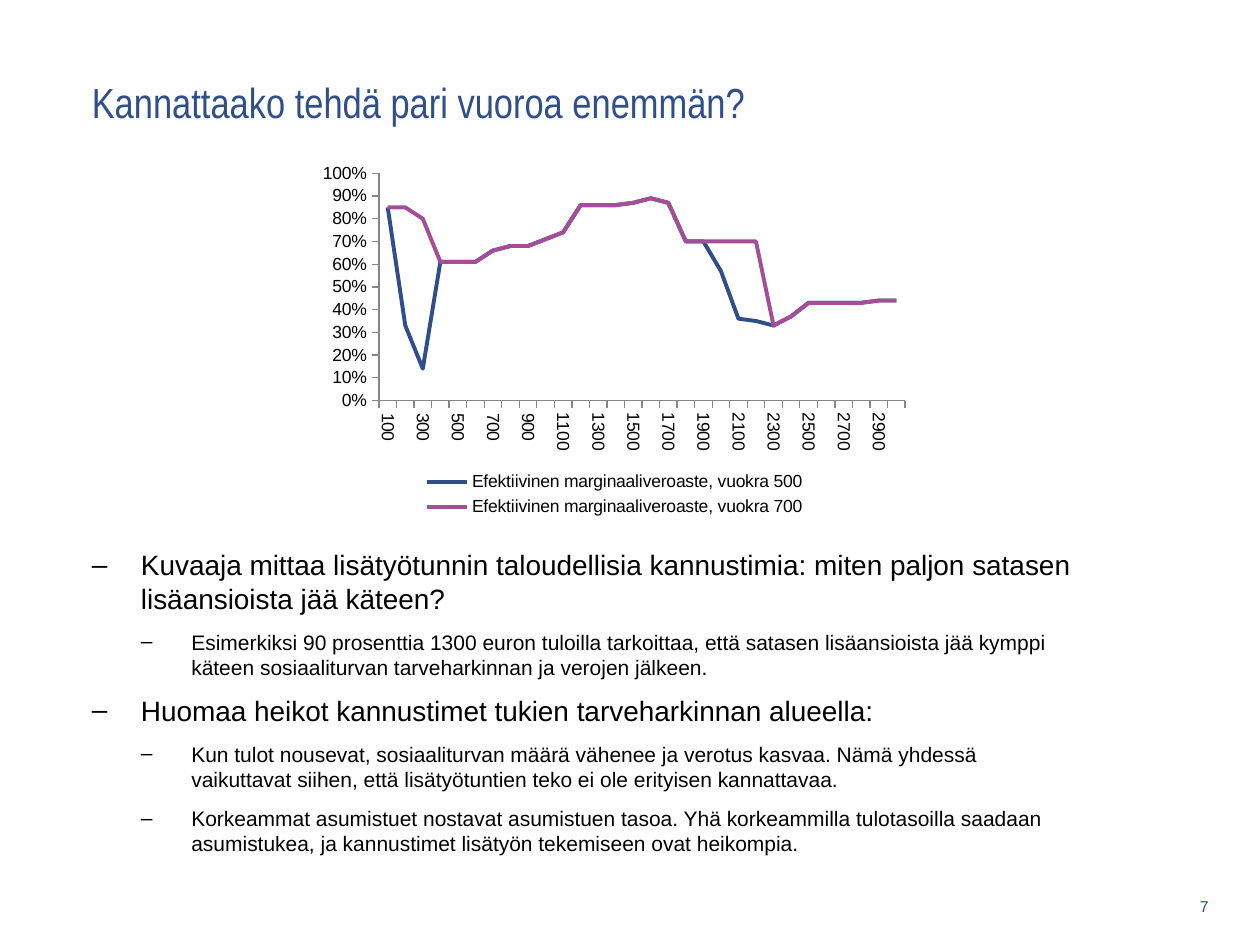
from lxml import etree
from pptx import Presentation
from pptx.chart.data import CategoryChartData
from pptx.dml.color import RGBColor
from pptx.enum.chart import XL_CHART_TYPE, XL_LEGEND_POSITION, XL_TICK_MARK
from pptx.enum.text import MSO_ANCHOR, PP_ALIGN
from pptx.oxml import parse_xml
from pptx.oxml.ns import nsdecls, qn
from pptx.util import Inches, Pt

LINE = XL_CHART_TYPE.LINE
BOTTOM = XL_LEGEND_POSITION.BOTTOM
OUTSIDE, NO_TICK = XL_TICK_MARK.OUTSIDE, XL_TICK_MARK.NONE
TOP, MIDDLE = MSO_ANCHOR.TOP, MSO_ANCHOR.MIDDLE
RIGHT = PP_ALIGN.RIGHT

BLUE, PURPLE, BLACK, GREY = "304E88", "A34E96", "000000", "868686"
LEFT, WIDTH = 0.63, 7.99

TITLE = "Kannattaako tehdä pari vuoroa enemmän?"
PAGE = "7"
BULLETS = [
    (0, "Kuvaaja mittaa lisätyötunnin taloudellisia kannustimia: miten paljon "
        "satasen lisäansioista jää käteen?"),
    (1, "Esimerkiksi 90 prosenttia 1300 euron tuloilla tarkoittaa, että satasen "
        "lisäansioista jää kymppi käteen sosiaaliturvan tarveharkinnan ja "
        "verojen jälkeen."),
    (0, "Huomaa heikot kannustimet tukien tarveharkinnan alueella:"),
    (1, "Kun tulot nousevat, sosiaaliturvan määrä vähenee ja verotus kasvaa. "
        "Nämä yhdessä vaikuttavat siihen, että lisätyötuntien teko ei ole "
        "erityisen kannattavaa."),
    (1, "Korkeammat asumistuet nostavat asumistuen tasoa. Yhä korkeammilla "
        "tulotasoilla saadaan asumistukea, ja kannustimet lisätyön tekemiseen "
        "ovat heikompia."),
]
LEVELS = [(0.39, 0.39, 16), (0.79, 0.4, 12)]  # margin, hanging indent, size

INCOMES = [str(income) for income in range(100, 3001, 100)]
# Both rents share the middle and the end of the curve
MIDDLE_RATES = [0.61, 0.61, 0.61, 0.66, 0.68, 0.68, 0.71, 0.74, 0.86, 0.86,
                0.86, 0.87, 0.89, 0.87, 0.7, 0.7]
END_RATES = [0.33, 0.37, 0.43, 0.43, 0.43, 0.43, 0.44, 0.44]
SERIES = [
    ("Efektiivinen marginaaliveroaste, vuokra 500", BLUE,
     [0.85, 0.33, 0.14] + MIDDLE_RATES + [0.57, 0.36, 0.35] + END_RATES),
    ("Efektiivinen marginaaliveroaste, vuokra 700", PURPLE,
     [0.85, 0.85, 0.8] + MIDDLE_RATES + [0.7, 0.7, 0.7] + END_RATES),
]
PLOT_AREA = {"x": 0.11, "y": 0.05, "w": 0.87, "h": 0.62}  # shares of the chart


def rgb(color):
    return RGBColor.from_string(color)


def set_font(font, size, color, name="Arial"):
    font.size, font.name, font.color.rgb = Pt(size), name, rgb(color)


def add_text(slide, box, text="", anchor=TOP):
    tf = slide.shapes.add_textbox(*map(Inches, box)).text_frame
    tf.word_wrap, tf.vertical_anchor, tf.text = True, anchor, text
    return tf


def add_bullets(tf):
    for i, (level, text) in enumerate(BULLETS):
        margin, hang, size = LEVELS[level]
        p = tf.paragraphs[0] if i == 0 else tf.add_paragraph()
        p.text, p.level, p.space_after = text, level, Pt(8)
        pPr = p._p.get_or_add_pPr()
        pPr.set("marL", str(Inches(margin)))
        pPr.set("indent", str(-Inches(hang)))
        etree.SubElement(pPr, qn("a:buFont")).set("typeface", "Arial")
        etree.SubElement(pPr, qn("a:buChar")).set("char", "‒")
        set_font(p.runs[0].font, size, BLACK)


def add_rate_chart(slide, box):
    data = CategoryChartData(number_format="0%")
    data.categories = INCOMES
    for name, _, rates in SERIES:
        data.add_series(name, rates)
    chart = slide.shapes.add_chart(LINE, *map(Inches, box), data).chart
    set_font(chart.font, 10, BLACK)
    chart.has_title = False
    chart.has_legend = True
    chart.legend.position = BOTTOM
    chart.legend.include_in_layout = False

    chart.plots[0].vary_by_categories = False
    for series, (_, color, _) in zip(chart.plots[0].series, SERIES):
        series.smooth = False
        series.format.line.width = Pt(2.25)
        series.format.line.color.rgb = rgb(color)

    rate_axis, income_axis = chart.value_axis, chart.category_axis
    for axis in (rate_axis, income_axis):
        axis.has_major_gridlines = False
        axis.major_tick_mark, axis.minor_tick_mark = OUTSIDE, NO_TICK
        axis.format.line.color.rgb = rgb(GREY)
        set_font(axis.tick_labels.font, 10, BLACK)
    rate_axis.minimum_scale, rate_axis.maximum_scale = 0, 1
    rate_axis.major_unit = 0.1
    rate_axis.tick_labels.number_format = "0%"
    rate_axis.tick_labels.number_format_is_linked = False

    # Vertical income labels, every second one shown
    cat = income_axis._element
    cat.find(qn("c:txPr")).find(qn("a:bodyPr")).set("rot", "5400000")
    cat.find(qn("c:noMultiLvlLbl")).addprevious(
        parse_xml(f'<c:tickLblSkip {nsdecls("c")} val="2"/>'))

    plot_area = chart._chartSpace.chart.plotArea
    for old in plot_area.findall(qn("c:layout")):
        plot_area.remove(old)
    modes = '<c:layoutTarget val="inner"/><c:xMode val="edge"/><c:yMode val="edge"/>'
    sizes = "".join(f'<c:{k} val="{v}"/>' for k, v in PLOT_AREA.items())
    plot_area.insert(0, parse_xml(
        f'<c:layout {nsdecls("c")}><c:manualLayout>{modes}{sizes}'
        '</c:manualLayout></c:layout>'))


def main():
    prs = Presentation()
    prs.slide_width, prs.slide_height = Inches(10), Inches(7.5)
    slide = prs.slides.add_slide(prs.slide_layouts[6])

    title = add_text(slide, (LEFT, 0.16, WIDTH, 1.3), TITLE, MIDDLE)
    set_font(title.paragraphs[0].runs[0].font, 24, BLUE, "Arial Narrow")

    add_bullets(add_text(slide, (LEFT, 4.3, WIDTH, 2.44)))

    page = add_text(slide, (9.17, 7.03, 0.52, 0.32), PAGE, MIDDLE).paragraphs[0]
    page.alignment = RIGHT
    set_font(page.runs[0].font, 9, BLUE)

    add_rate_chart(slide, (2.48, 1.23, 4.8, 2.91))
    prs.save("out.pptx")


if __name__ == "__main__":
    main()
